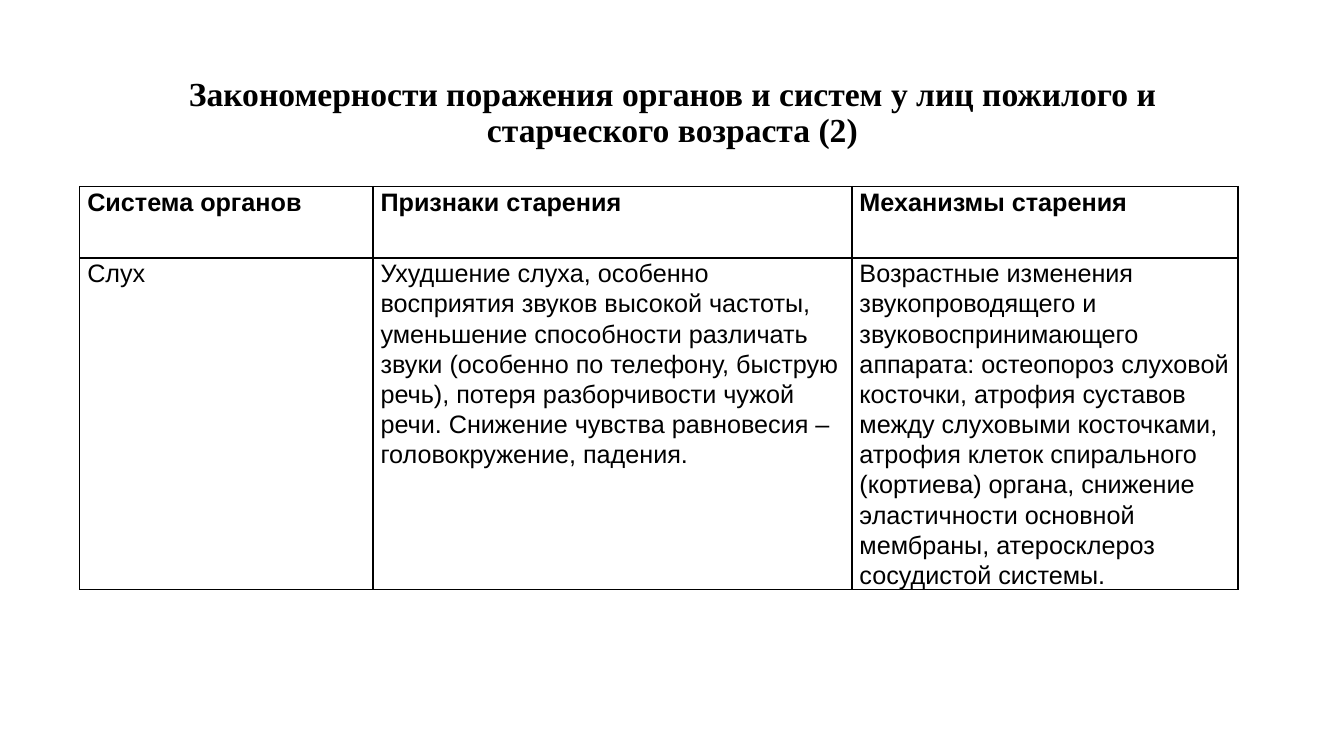
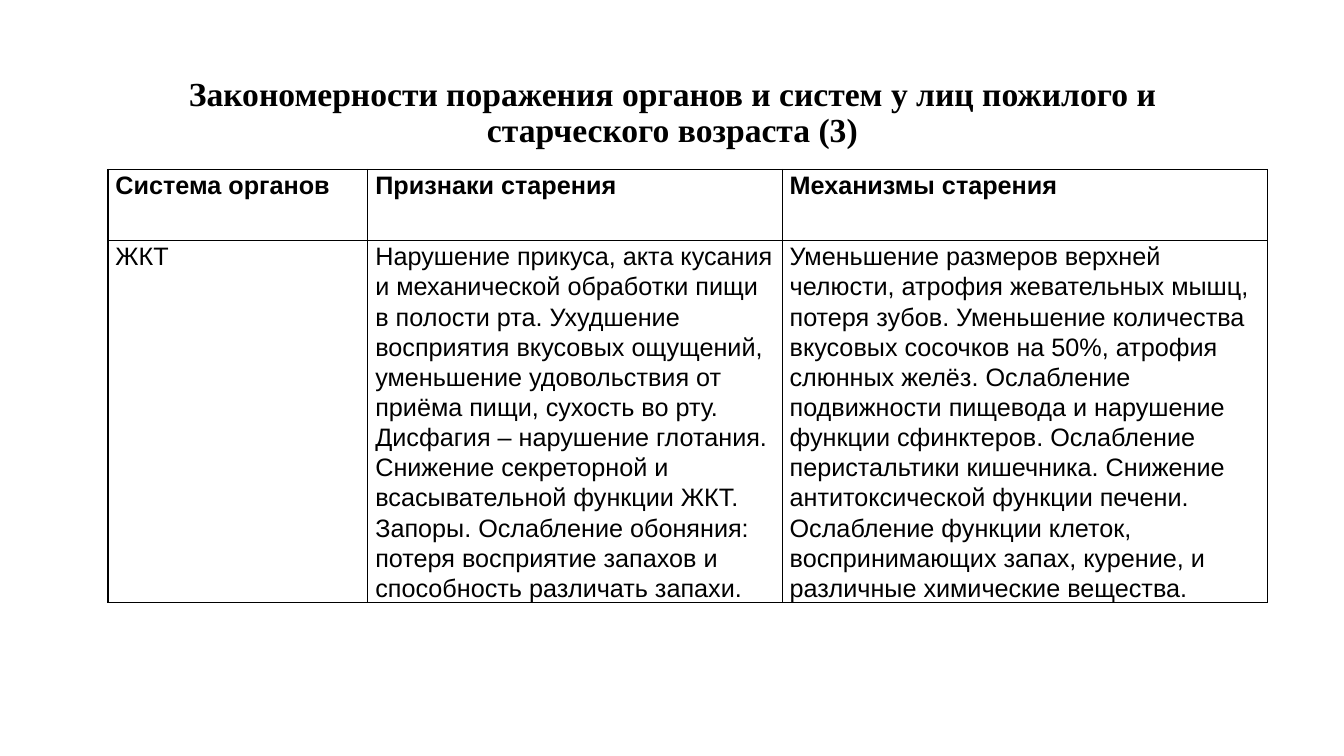
from lxml import etree
from pptx import Presentation
from pptx.dml.color import RGBColor
from pptx.enum import text
from pptx.oxml import ns
from pptx.util import Cm, Pt

BLACK = RGBColor(0x00, 0x00, 0x00)
TITLE_BOX = (Cm(2.34), Cm(1.02), Cm(29.21), Cm(3.68))
TITLE = "Закономерности поражения органов и систем у лиц пожилого и старческого возраста ({})"
HEADINGS = ("Система органов", "Признаки старения", "Механизмы старения")
HEADING_HEIGHT = 1.8

SYSTEMS = [
    {
        "number": 2,
        "corner": (2.01, 4.7),
        "widths": (7.39, 12.07, 9.73),
        "body_height": 8.33,
        "heading_align": text.PP_ALIGN.LEFT,
        "findings": (
            "Слух",
            "Ухудшение слуха, особенно восприятия звуков высокой частоты, уменьшение "
            "способности различать звуки (особенно по телефону, быструю речь), потеря "
            "разборчивости чужой речи. Снижение чувства равновесия – головокружение, падения.",
            "Возрастные изменения звукопроводящего и звуковоспринимающего аппарата: "
            "остеопороз слуховой косточки, атрофия суставов между слуховыми косточками, "
            "атрофия клеток спирального (кортиева) органа, снижение эластичности основной "
            "мембраны, атеросклероз сосудистой системы.",
        ),
    },
    {
        "number": 3,
        "corner": (2.72, 4.27),
        "widths": (6.55, 10.44, 12.24),
        "body_height": 9.12,
        "heading_align": text.PP_ALIGN.JUSTIFY,
        "findings": (
            "ЖКТ",
            "Нарушение прикуса, акта кусания и механической обработки пищи в полости рта. "
            "Ухудшение восприятия вкусовых ощущений, уменьшение удовольствия от приёма пищи, "
            "сухость во рту. Дисфагия – нарушение глотания. Снижение секреторной и "
            "всасывательной функции ЖКТ. Запоры. Ослабление обоняния: потеря восприятие "
            "запахов и способность различать запахи.",
            "Уменьшение размеров верхней челюсти, атрофия жевательных мышц, потеря зубов. "
            "Уменьшение количества вкусовых сосочков на 50%, атрофия слюнных желёз. "
            "Ослабление подвижности пищевода и нарушение функции сфинктеров. Ослабление "
            "перистальтики кишечника. Снижение антитоксической функции печени. Ослабление "
            "функции клеток, воспринимающих запах, курение, и различные химические вещества.",
        ),
    },
]


def style_paragraph(paragraph, font_name, size, bold, align, spacing):
    """Format a paragraph and its runs."""
    paragraph.alignment = align
    paragraph.line_spacing = spacing
    for run in paragraph.runs:
        run.font.name = font_name
        run.font.size = Pt(size)
        run.font.bold = bold
        run.font.color.rgb = BLACK


def add_title(slide, number):
    """Place and fill the numbered slide title."""
    title = slide.shapes.title
    title.left, title.top, title.width, title.height = TITLE_BOX
    frame = title.text_frame
    frame.text = TITLE.format(number)
    frame.word_wrap = True
    frame.auto_size = text.MSO_AUTO_SIZE.NONE
    frame.vertical_anchor = text.MSO_ANCHOR.MIDDLE
    style_paragraph(frame.paragraphs[0], "Times New Roman", 24, True, text.PP_ALIGN.CENTER, 0.9)


def add_borders(cell):
    """Draw a thin black line on every side of a cell."""
    properties = cell._tc.get_or_add_tcPr()
    for side in ("a:lnL", "a:lnR", "a:lnT", "a:lnB"):
        line = etree.SubElement(properties, ns.qn(side), w=str(Pt(1)))
        fill = etree.SubElement(line, ns.qn("a:solidFill"))
        etree.SubElement(fill, ns.qn("a:srgbClr"), val=str(BLACK))


def fill_cell(cell, wording, bold, align):
    """Write one table cell with its borders and margins."""
    add_borders(cell)
    cell.fill.background()
    cell.margin_left = cell.margin_right = Cm(0.19)
    cell.margin_top = cell.margin_bottom = 0
    paragraph = cell.text_frame.paragraphs[0]
    paragraph.text = wording
    paragraph.space_after = Pt(8)
    style_paragraph(paragraph, "Arial", 18, bold, align, 1.07)


def add_ageing_table(slide, corner, widths, body_height, heading_align, findings):
    """Add the table of ageing signs and mechanisms at the given corner."""
    left, top = corner
    heights = (HEADING_HEIGHT, body_height)
    frame = slide.shapes.add_table(
        len(heights), len(widths), Cm(left), Cm(top), Cm(sum(widths)), Cm(sum(heights))
    )
    table = frame.table
    table.first_row = table.horz_banding = False
    for column, width in zip(table.columns, widths):
        column.width = Cm(width)
    for row, height in zip(table.rows, heights):
        row.height = Cm(height)
    for index, (heading, finding) in enumerate(zip(HEADINGS, findings)):
        fill_cell(table.cell(0, index), heading, True, heading_align)
        fill_cell(table.cell(1, index), finding, False, text.PP_ALIGN.LEFT)


def add_system_slide(deck, number, **table_parts):
    """Add a slide about one organ system."""
    slide = deck.slides.add_slide(deck.slide_layouts[5])
    add_title(slide, number)
    add_ageing_table(slide, **table_parts)


def main():
    """Build and save the presentation."""
    deck = Presentation()
    deck.slide_width, deck.slide_height = Cm(33.87), Cm(19.05)
    for system in SYSTEMS:
        add_system_slide(deck, **system)
    deck.save("out.pptx")


if __name__ == "__main__":
    main()
